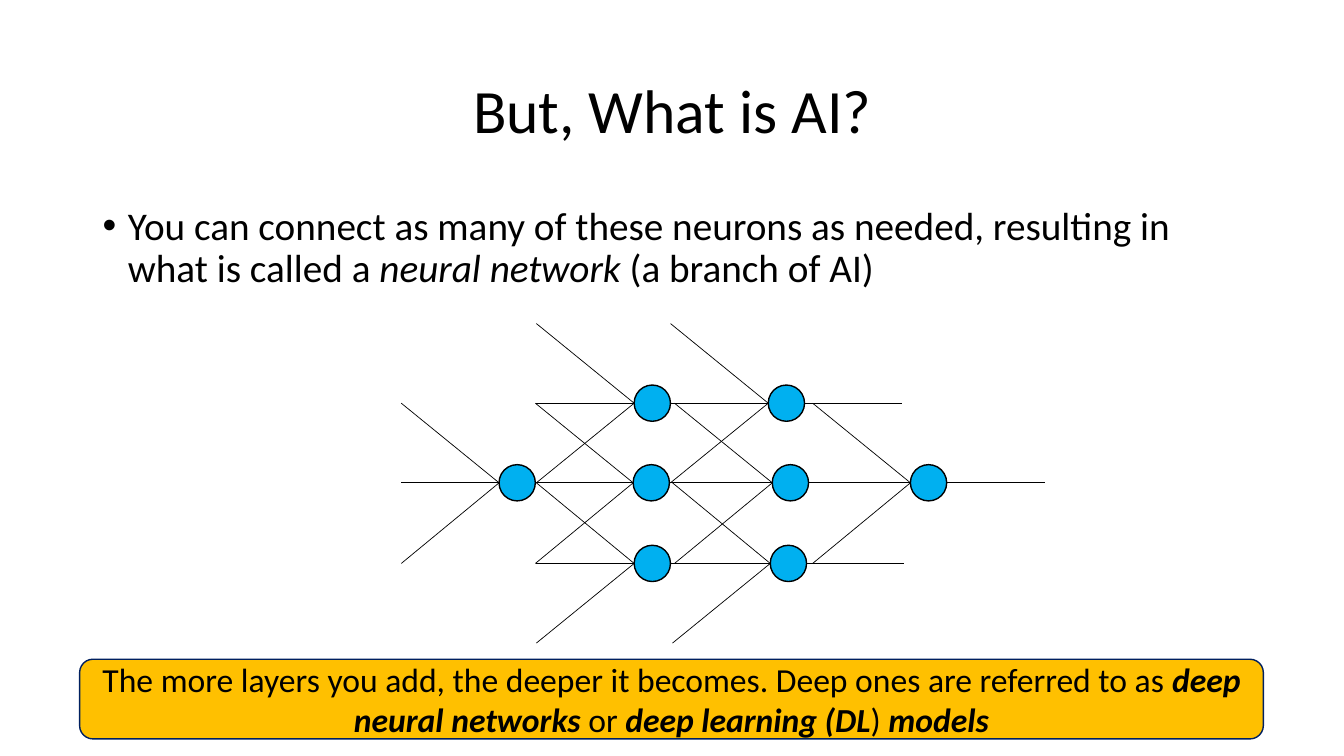
from dataclasses import dataclass
from typing import NamedTuple

from lxml import etree
from pptx import Presentation
from pptx import util as u
from pptx.dml.color import RGBColor
from pptx.enum import shapes, text
from pptx.oxml.ns import qn

EMU_PER_PX = 9144  # 100 px to the inch


@dataclass(frozen=True)
class Theme:
    font: str = "Calibri"
    ink: str = "000000"
    neuron: str = "00B0F0"
    banner: str = "FFC000"
    banner_edge: str = "002060"
    title_size: int = 44
    body_size: int = 28
    banner_size: int = 24
    outline: float = 1
    wire: float = 0.5


class Run(NamedTuple):
    text: str
    bold: bool = False
    italic: bool = False


class Neuron(NamedTuple):
    left: int
    row: int
    has_output: bool = True


THEME = Theme()
DIAMETER = 36
REACH = 97
ROWS = (321, 400, 479, 559, 638)  # heights where wires start and end

NEURONS = (
    Neuron(495, 2),
    Neuron(629, 1, has_output=False),
    Neuron(629, 3),
    Neuron(628, 2),
    Neuron(766, 2),
    Neuron(762, 1),
    Neuron(764, 3),
    Neuron(903, 2),
)

TITLE = (Run("But, What is AI?"),)
BODY = (
    Run("You can connect as many of these neurons as needed, resulting in what is called a "),
    Run("neural network ", italic=True),
    Run("(a branch of AI)"),
)
BANNER = (
    Run("The more layers you add, the deeper it becomes. Deep ones are referred to as "),
    Run("deep neural networks ", bold=True, italic=True),
    Run("or "),
    Run("deep learning (DL", bold=True, italic=True),
    Run(") "),
    Run("models", bold=True, italic=True),
)


def px(length: int) -> u.Emu:
    return u.Emu(length * EMU_PER_PX)


def write_text(shape, runs: tuple[Run, ...], *, size: int, align=text.PP_ALIGN.LEFT,
               anchor=text.MSO_ANCHOR.TOP, line_spacing: float = 1.0,
               space_before: int = 0, bullet: str = "") -> None:
    frame = shape.text_frame
    frame.word_wrap = True
    frame.vertical_anchor = anchor
    paragraph = frame.paragraphs[0]
    paragraph.alignment = align
    paragraph.line_spacing = line_spacing
    paragraph.space_before = u.Pt(space_before)
    if bullet:
        properties = paragraph._p.get_or_add_pPr()
        properties.set("marL", str(px(25)))
        properties.set("indent", str(-px(25)))
        etree.SubElement(properties, qn("a:buFont")).set("typeface", "Arial")
        etree.SubElement(properties, qn("a:buChar")).set("char", bullet)
    for piece in runs:
        run = paragraph.add_run()
        run.text = piece.text
        run.font.name = THEME.font
        run.font.size = u.Pt(size)
        run.font.bold = piece.bold
        run.font.italic = piece.italic
        run.font.color.rgb = RGBColor.from_string(THEME.ink)


def add_text_box(slide, left: int, top: int, width: int, height: int):
    return slide.shapes.add_textbox(px(left), px(top), px(width), px(height))


def add_filled_shape(container, kind, left: int, top: int, width: int, height: int,
                     *, fill: str, edge: str):
    shape = container.shapes.add_shape(kind, px(left), px(top), px(width), px(height))
    shape.shadow.inherit = False
    shape.fill.solid()
    shape.fill.fore_color.rgb = RGBColor.from_string(fill)
    shape.line.color.rgb = RGBColor.from_string(edge)
    shape.line.width = u.Pt(THEME.outline)
    return shape


def add_wire(container, start: tuple[int, int], end: tuple[int, int]) -> None:
    wire = container.shapes.add_connector(
        shapes.MSO_CONNECTOR.STRAIGHT, *map(px, start + end))
    wire.line.color.rgb = RGBColor.from_string(THEME.ink)
    wire.line.width = u.Pt(THEME.wire)
    etree.SubElement(wire._element.spPr, qn("a:effectLst"))


def add_neuron(slide, neuron: Neuron) -> None:
    """Group a cell with its three incoming wires and its optional outgoing one."""
    group = slide.shapes.add_group_shape()
    middle = ROWS[neuron.row]
    right = neuron.left + DIAMETER
    add_filled_shape(group, shapes.MSO_SHAPE.OVAL, neuron.left, middle - DIAMETER // 2,
                     DIAMETER, DIAMETER, fill=THEME.neuron, edge=THEME.ink)
    for source in ROWS[neuron.row - 1:neuron.row + 2]:
        add_wire(group, (neuron.left - REACH, source), (neuron.left, middle))
    if neuron.has_output:
        add_wire(group, (right, middle), (right + REACH, middle))


def main() -> None:
    presentation = Presentation()
    presentation.slide_width, presentation.slide_height = px(1333), px(750)
    slide = presentation.slides.add_slide(presentation.slide_layouts[6])

    write_text(add_text_box(slide, 92, 40, 1150, 145), TITLE, size=THEME.title_size,
               align=text.PP_ALIGN.CENTER, anchor=text.MSO_ANCHOR.MIDDLE, line_spacing=0.9)
    write_text(add_text_box(slide, 92, 200, 1165, 124), BODY, size=THEME.body_size,
               line_spacing=0.9, space_before=10, bullet="•")
    for neuron in NEURONS:
        add_neuron(slide, neuron)
    banner = add_filled_shape(slide, shapes.MSO_SHAPE.ROUNDED_RECTANGLE, 79, 654, 1174, 79,
                              fill=THEME.banner, edge=THEME.banner_edge)
    write_text(banner, BANNER, size=THEME.banner_size, align=text.PP_ALIGN.CENTER,
               anchor=text.MSO_ANCHOR.MIDDLE)

    presentation.save("out.pptx")


if __name__ == "__main__":
    main()
